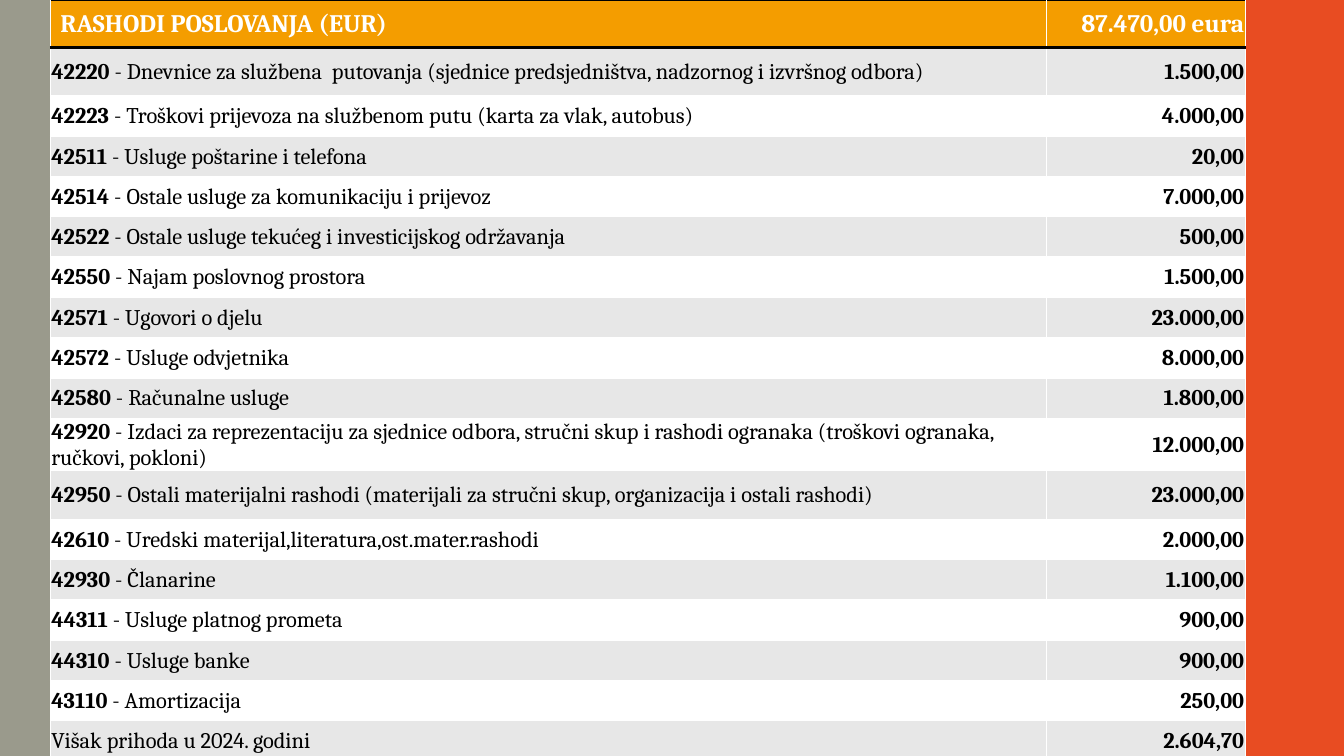
from dataclasses import dataclass

from lxml import etree
from pptx import Presentation
from pptx.dml.color import RGBColor
from pptx.enum.shapes import MSO_SHAPE
from pptx.enum.text import MSO_ANCHOR, PP_ALIGN
from pptx.oxml.ns import qn
from pptx.util import Inches, Pt

RECT = MSO_SHAPE.RECTANGLE
MIDDLE = MSO_ANCHOR.MIDDLE
LEFT, RIGHT = PP_ALIGN.LEFT, PP_ALIGN.RIGHT


@dataclass(frozen=True)
class Theme:
    """Colours, font and type sizes of the slide."""
    orange: str = "E84C22"
    olive: str = "9A9A8C"
    amber: str = "F49D00"
    grey: str = "E7E7E7"
    white: str = "FFFFFF"
    black: str = "000000"
    font: str = "Cambria"
    head: int = 18
    body: int = 16
    rule: int = 2


THEME = Theme()
HEAD = ("RASHODI POSLOVANJA (EUR)", "87.470,00 eura")
COSTS = [
    ("42220", "Dnevnice za službena  putovanja (sjednice predsjedništva, nadzornog i izvršnog odbora)", "1.500,00"),
    ("42223", "Troškovi prijevoza na službenom putu (karta za vlak, autobus)", "4.000,00"),
    ("42511", "Usluge poštarine i telefona", "20,00"),
    ("42514", "Ostale usluge za komunikaciju i prijevoz", "7.000,00"),
    ("42522", "Ostale usluge tekućeg i investicijskog održavanja", "500,00"),
    ("42550", "Najam poslovnog prostora", "1.500,00"),
    ("42571", "Ugovori o djelu", "23.000,00"),
    ("42572", "Usluge odvjetnika", "8.000,00"),
    ("42580", "Računalne usluge", "1.800,00"),
    ("42920", "Izdaci za reprezentaciju za sjednice odbora, stručni skup i rashodi ogranaka "
              "(troškovi ogranaka, ručkovi, pokloni)", "12.000,00"),
    ("42950", "Ostali materijalni rashodi (materijali za stručni skup, organizacija i ostali rashodi)", "23.000,00"),
    ("42610", "Uredski materijal,literatura,ost.mater.rashodi", "2.000,00"),
    ("42930", "Članarine", "1.100,00"),
    ("44311", "Usluge platnog prometa", "900,00"),
    ("44310", "Usluge banke", "900,00"),
    ("43110", "Amortizacija", "250,00"),
]
SURPLUS = ("Višak prihoda u 2024. godini", "2.604,70")
COLS = (9.88, 1.97)
ROW = 0.4
TALL = {0: 0.47, 1: 0.48, 10: 0.51, 11: 0.48}


def draw_band(slide, box, color):
    """Draw a plain vertical band in the box."""
    band = slide.shapes.add_shape(RECT, *map(Inches, box))
    band.shadow.inherit = False
    band.fill.solid()
    band.fill.fore_color.rgb = RGBColor.from_string(color)
    band.line.fill.background()


def rule_cell(cell, sides):
    """Add black rules to the named sides of a cell."""
    props = cell._tc.get_or_add_tcPr()
    for spot, side in enumerate(sides):
        line = etree.Element(qn("a:ln" + side), w=str(Pt(THEME.rule)))
        fill = etree.SubElement(line, qn("a:solidFill"))
        etree.SubElement(fill, qn("a:srgbClr"), val=THEME.black)
        props.insert(spot, line)


def fill_cell(cell, parts, fill, color, size, align):
    """Fill a cell with (text, bold) parts in one style."""
    cell.fill.solid()
    cell.fill.fore_color.rgb = RGBColor.from_string(fill)
    cell.vertical_anchor = MIDDLE
    cell.margin_left = cell.margin_right = cell.margin_top = Inches(0.01)
    cell.margin_bottom = 0
    para = cell.text_frame.paragraphs[0]
    para.alignment = align
    for text, bold in parts:
        run = para.add_run()
        run.text = text
        run.font.name = THEME.font
        run.font.size = Pt(size)
        run.font.bold = bold
        run.font.color.rgb = RGBColor.from_string(color)


def draw_costs(slide, box):
    """Draw the table of costs in the box."""
    rows = [([(HEAD[0], True)], HEAD[1])]
    rows += [([(code + " ", True), ("- " + name, False)], sum_) for code, name, sum_ in COSTS]
    rows.append(([(SURPLUS[0], False)], SURPLUS[1]))
    table = slide.shapes.add_table(len(rows), len(COLS), *map(Inches, box)).table
    for col, width in zip(table.columns, COLS):
        col.width = Inches(width)
    for num, (label, sum_) in enumerate(rows):
        table.rows[num].height = Inches(TALL.get(num, ROW))
        if num == 0:
            style = THEME.amber, THEME.white, THEME.head
        else:
            style = THEME.grey if num % 2 else THEME.white, THEME.black, THEME.body
        pair = table.cell(num, 0), table.cell(num, 1)
        fill_cell(pair[0], label, *style, LEFT)
        fill_cell(pair[1], [(sum_, True)], *style, RIGHT)
        for cell in pair:
            if num == 0:
                rule_cell(cell, "TB")
            elif num == len(rows) - 1:
                rule_cell(cell, "B")
    table.cell(0, 0).margin_left = Inches(0.1)


def main():
    """Build the slide and save it."""
    deck = Presentation()
    deck.slide_width, deck.slide_height = Inches(13.33), Inches(7.5)
    slide = deck.slides.add_slide(deck.slide_layouts[6])
    draw_band(slide, (12.35, 0, 0.98, 7.5), THEME.orange)
    draw_band(slide, (0, 0, 0.5, 7.5), THEME.olive)
    draw_costs(slide, (0.5, 0, sum(COLS), 7.5))
    deck.save("out.pptx")


if __name__ == "__main__":
    main()
